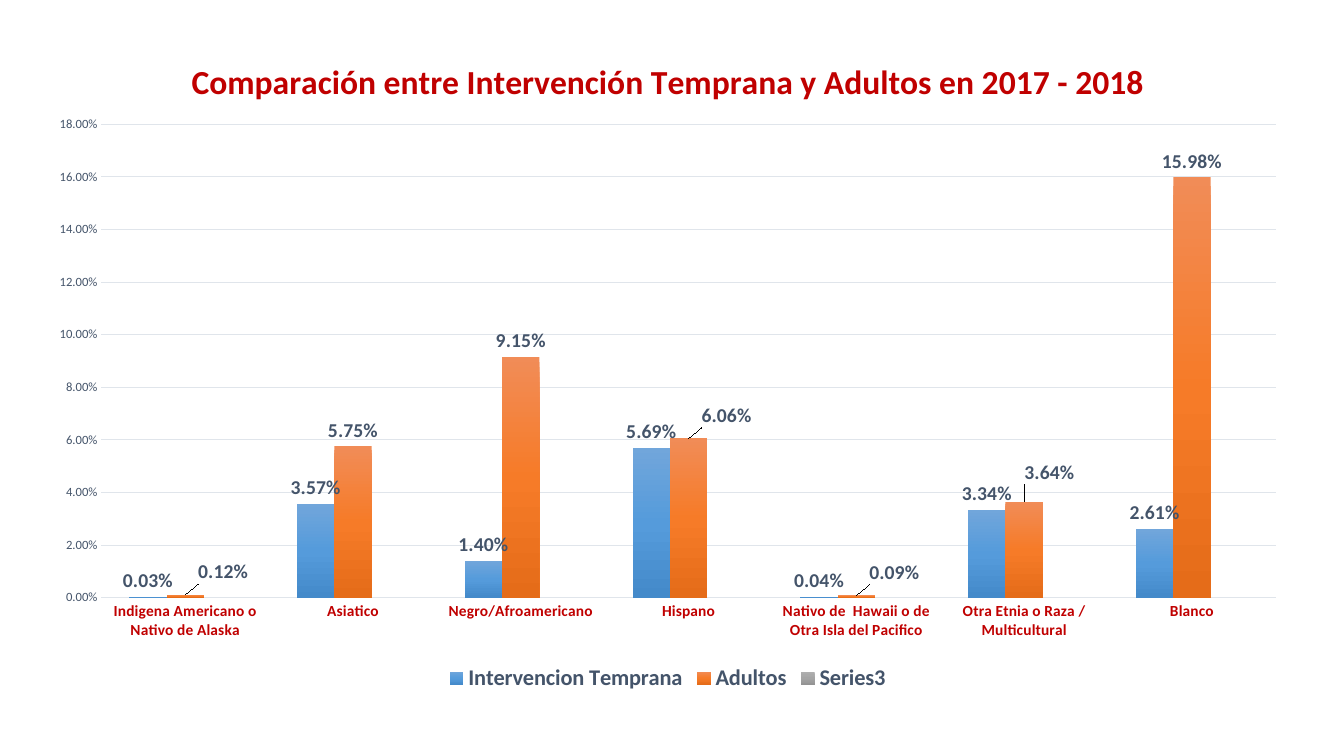
from pptx import Presentation
from pptx.chart.data import CategoryChartData
from pptx.dml.color import RGBColor
from pptx.enum.chart import XL_CHART_TYPE, XL_LABEL_POSITION, XL_LEGEND_POSITION, XL_TICK_MARK
from pptx.oxml import parse_xml
from pptx.oxml.ns import nsdecls
from pptx.util import Pt

COLUMNS = XL_CHART_TYPE.COLUMN_CLUSTERED
ABOVE = XL_LABEL_POSITION.OUTSIDE_END
BOTTOM = XL_LEGEND_POSITION.BOTTOM
NO_TICK = XL_TICK_MARK.NONE

FACE = "Calibri"
RED, SLATE, PALE = "C00000", "44546A", "E0E5EB"
PERCENT = "0.00%"
TITLE = "Comparación entre Intervención Temprana y Adultos en 2017 - 2018"
GROUPS = [
    "Indigena Americano o Nativo de Alaska",
    "Asiatico",
    "Negro/Afroamericano",
    "Hispano",
    "Nativo de  Hawaii o de Otra Isla del Pacifico",
    "Otra Etnia o Raza / Multicultural",
    "Blanco",
]
SERIES = [
    ("Intervencion Temprana", [0.0003, 0.0357, 0.014, 0.0569, 0.0004, 0.0334, 0.0261],
     ("71A6DB", "559BDB", "448ACA"), {}),
    ("Adultos", [0.0012, 0.0575, 0.0915, 0.0606, 0.0009, 0.0364, 0.1598],
     ("F18C57", "F67B28", "E56C19"),
     {0: (0.03, -0.01), 3: (0.03, -0.01), 4: (0.03, -0.01), 5: (0.02, -0.02)}),
    ("Series3", [None] * len(GROUPS), ("AFAFAF", "A5A5A5", "939393"), {}),
]


def paint(text):
    return RGBColor.from_string(text)


def style(font, size, tint, bold=False):
    font.name = FACE
    font.size = Pt(size)
    font.bold = bold
    font.color.rgb = paint(tint)


def rule(line):
    line.color.rgb = paint(PALE)
    line.width = Pt(0.75)


def layout(x, y, size=None):
    parts = ""
    if size:
        parts = '<c:layoutTarget val="inner"/><c:xMode val="edge"/><c:yMode val="edge"/>'
    parts += f'<c:x val="{x}"/><c:y val="{y}"/>'
    if size:
        parts += f'<c:w val="{size[0]}"/><c:h val="{size[1]}"/>'
    return parse_xml(f'<c:layout {nsdecls("c")}><c:manualLayout>{parts}'
                     '</c:manualLayout></c:layout>')


def shade(series, tints):
    stops = "".join(f'<a:gs pos="{step * 50000}"><a:srgbClr val="{tint}"/></a:gs>'
                    for step, tint in enumerate(tints))
    fill = parse_xml(f'<a:gradFill {nsdecls("a")} rotWithShape="1"><a:gsLst>{stops}</a:gsLst>'
                     '<a:lin ang="5400000" scaled="0"/></a:gradFill>')
    series._element.get_or_add_spPr().insert(0, fill)


def label(series, shifts):
    labels = series.data_labels
    labels.show_value = True
    labels.number_format = PERCENT
    labels.number_format_is_linked = False
    labels.position = ABOVE
    style(labels.font, 14, SLATE, True)
    for index, shift in shifts.items():
        mark = series.points[index].data_label
        style(mark.font, 14, SLATE, True)
        mark.position = ABOVE
        node = series._element.xpath(f'c:dLbls/c:dLbl/c:idx[@val="{index}"]')[0]
        form = parse_xml(f'<c:numFmt {nsdecls("c")} formatCode="{PERCENT}" sourceLinked="0"/>')
        node.addnext(form)
        node.addnext(layout(*shift))


def set_axes(chart):
    names = chart.category_axis
    names.major_tick_mark = names.minor_tick_mark = NO_TICK
    rule(names.format.line)
    style(names.tick_labels.font, 11, RED, True)
    rates = chart.value_axis
    rates.major_tick_mark = rates.minor_tick_mark = NO_TICK
    rates.minimum_scale, rates.maximum_scale, rates.major_unit = 0, 0.18, 0.02
    rates.format.line.fill.background()
    rule(rates.major_gridlines.format.line)
    rates.tick_labels.number_format = PERCENT
    rates.tick_labels.number_format_is_linked = False
    style(rates.tick_labels.font, 9, SLATE)


def add_bars(slide, left, top, width, height):
    data = CategoryChartData(number_format=PERCENT)
    data.categories = GROUPS
    for name, rates, tints, shifts in SERIES:
        data.add_series(name, rates)
    chart = slide.shapes.add_chart(COLUMNS, Pt(left), Pt(top), Pt(width), Pt(height), data).chart
    style(chart.font, 10, "000000")

    chart.has_title = True
    head = chart.chart_title
    head.include_in_layout = False
    head.text_frame.text = TITLE
    style(head.text_frame.paragraphs[0].runs[0].font, 24, RED, True)

    chart.has_legend = True
    chart.legend.position = BOTTOM
    chart.legend.include_in_layout = False
    style(chart.legend.font, 16, SLATE, True)

    set_axes(chart)
    plot = chart.plots[0]
    plot.gap_width = 150
    plot.overlap = 0
    plot.vary_by_categories = False
    for series, (name, rates, tints, shifts) in zip(plot.series, SERIES):
        shade(series, tints)
        label(series, shifts)

    area = chart._chartSpace.chart.plotArea
    for old in area.xpath("c:layout"):
        area.remove(old)
    area.insert(0, layout(0.053, 0.136, (0.927, 0.715)))


def main():
    deck = Presentation()
    deck.slide_width, deck.slide_height = Pt(960), Pt(540)
    slide = deck.slides.add_slide(deck.slide_layouts[6])
    add_bars(slide, 24.5, 24.5, 905, 473)
    deck.save("out.pptx")


if __name__ == "__main__":
    main()
